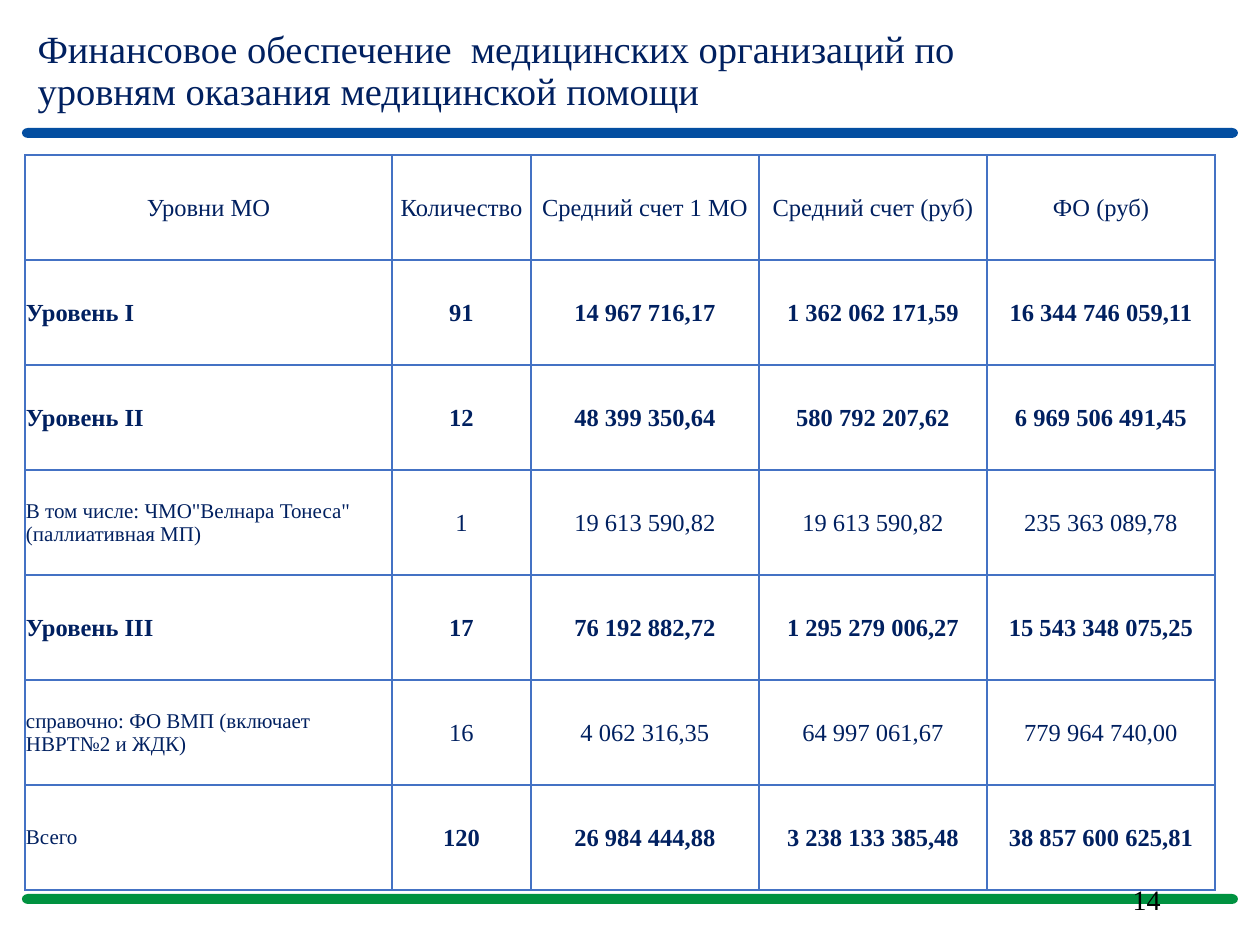
from lxml import etree
from pptx import Presentation
from pptx.dml.color import RGBColor
from pptx.enum.shapes import MSO_SHAPE
from pptx.enum.text import MSO_ANCHOR, MSO_AUTO_SIZE, PP_ALIGN
from pptx.oxml.ns import qn
from pptx.util import Pt

LEFT, CENTER, RIGHT = PP_ALIGN.LEFT, PP_ALIGN.CENTER, PP_ALIGN.RIGHT
MIDDLE, BOTTOM = MSO_ANCHOR.MIDDLE, MSO_ANCHOR.BOTTOM
NO_AUTOFIT = MSO_AUTO_SIZE.NONE
RECTANGLE, OVAL = MSO_SHAPE.RECTANGLE, MSO_SHAPE.OVAL

NAVY = RGBColor(0x00, 0x20, 0x60)
BLACK = RGBColor(0x00, 0x00, 0x00)
BLUE = RGBColor(0x03, 0x4E, 0xA1)
GREEN = RGBColor(0x00, 0x92, 0x40)
GRID = RGBColor(0x44, 0x72, 0xC4)
FONT = "Times New Roman"

TITLE = "Финансовое обеспечение  медицинских организаций по уровням оказания медицинской помощи"
PAGE_NUMBER = "14"
HEADER = ["Уровни МО", "Количество", "Средний счет 1 МО", "Средний счет (руб)", "ФО (руб)"]
LEVELS = [
    ["Уровень I", "91", "14 967 716,17", "1 362 062 171,59", "16 344 746 059,11"],
    ["Уровень II", "12", "48 399 350,64", "580 792 207,62", "6 969 506 491,45"],
    ['В том числе: ЧМО"Велнара Тонеса" (паллиативная МП)',
     "1", "19 613 590,82", "19 613 590,82", "235 363 089,78"],
    ["Уровень III", "17", "76 192 882,72", "1 295 279 006,27", "15 543 348 075,25"],
    ["справочно: ФО ВМП (включает НВРТ№2 и ЖДК)",
     "16", "4 062 316,35", "64 997 061,67", "779 964 740,00"],
    ["Всего", "120", "26 984 444,88", "3 238 133 385,48", "38 857 600 625,81"],
]
COLUMN_WIDTHS = [367, 139, 228, 228, 228]
ROW_HEIGHT = 105
BARS = [(128, BLUE), (894, GREEN)]
BAR_LEFT, BAR_WIDTH, BAR_HEIGHT, CAP_WIDTH = 28, 1204, 10, 12


def px(value):
    return round(value * 914400 / 126)


def box(*lengths):
    return [px(length) for length in lengths]


def write(frame, text, size, color, align, bold=False):
    frame.text = text
    paragraph = frame.paragraphs[0]
    paragraph.alignment = align
    font = paragraph.font
    font.name, font.size, font.bold = FONT, Pt(size), bold
    font.color.rgb = color
    return paragraph


def add_bar(slide, top, color):
    cap_left = BAR_LEFT - CAP_WIDTH / 2
    parts = [
        (RECTANGLE, BAR_LEFT, BAR_WIDTH),
        (OVAL, cap_left, CAP_WIDTH),
        (OVAL, cap_left + BAR_WIDTH, CAP_WIDTH),
    ]
    for preset, left, width in parts:
        part = slide.shapes.add_shape(preset, *box(left, top, width, BAR_HEIGHT))
        part.shadow.inherit = False
        part.fill.solid()
        part.fill.fore_color.rgb = color
        part.line.fill.background()


def add_borders(cell):
    properties = cell._tc.get_or_add_tcPr()
    for side in ("a:lnL", "a:lnR", "a:lnT", "a:lnB"):
        line = etree.SubElement(properties, qn(side), w=str(Pt(1)))
        fill = etree.SubElement(line, qn("a:solidFill"))
        etree.SubElement(fill, qn("a:srgbClr"), val=str(GRID))


def cell_style(row, column, label):
    if row == 0:
        return 14, CENTER, False
    is_level = label.startswith("Уровень")
    if column == 0:
        return (14 if is_level else 12), LEFT, is_level
    return 14, CENTER, is_level or label == "Всего"


def add_levels_table(slide):
    rows = [HEADER] + LEVELS
    table = slide.shapes.add_table(
        len(rows), len(HEADER),
        *box(25, 155, sum(COLUMN_WIDTHS), ROW_HEIGHT * len(rows))).table
    table.first_row = table.horz_banding = False
    for column, width in zip(table.columns, COLUMN_WIDTHS):
        column.width = px(width)
    for r, values in enumerate(rows):
        table.rows[r].height = px(ROW_HEIGHT)
        for c, value in enumerate(values):
            cell = table.cell(r, c)
            size, align, bold = cell_style(r, c, values[0])
            write(cell.text_frame, value, size, NAVY, align, bold)
            cell.vertical_anchor = MIDDLE
            cell.margin_left = cell.margin_right = cell.margin_top = px(1)
            cell.margin_bottom = 0
            add_borders(cell)
            cell.fill.background()


def main():
    deck = Presentation()
    deck.slide_width, deck.slide_height = box(1260, 945)
    slide = deck.slides.add_slide(deck.slide_layouts[5])

    for top, color in BARS:
        add_bar(slide, top, color)

    title = slide.shapes.title
    title.left, title.top, title.width, title.height = box(25, 16, 1086, 104)
    heading = write(title.text_frame, TITLE, 22, NAVY, LEFT)
    heading.line_spacing = 0.9
    title.text_frame.vertical_anchor = BOTTOM
    title.text_frame.auto_size = NO_AUTOFIT

    add_levels_table(slide)

    page = slide.shapes.add_textbox(*box(890, 876, 283, 50)).text_frame
    page.word_wrap = True
    write(page, PAGE_NUMBER, 16, BLACK, RIGHT)

    deck.save("out.pptx")


if __name__ == "__main__":
    main()
